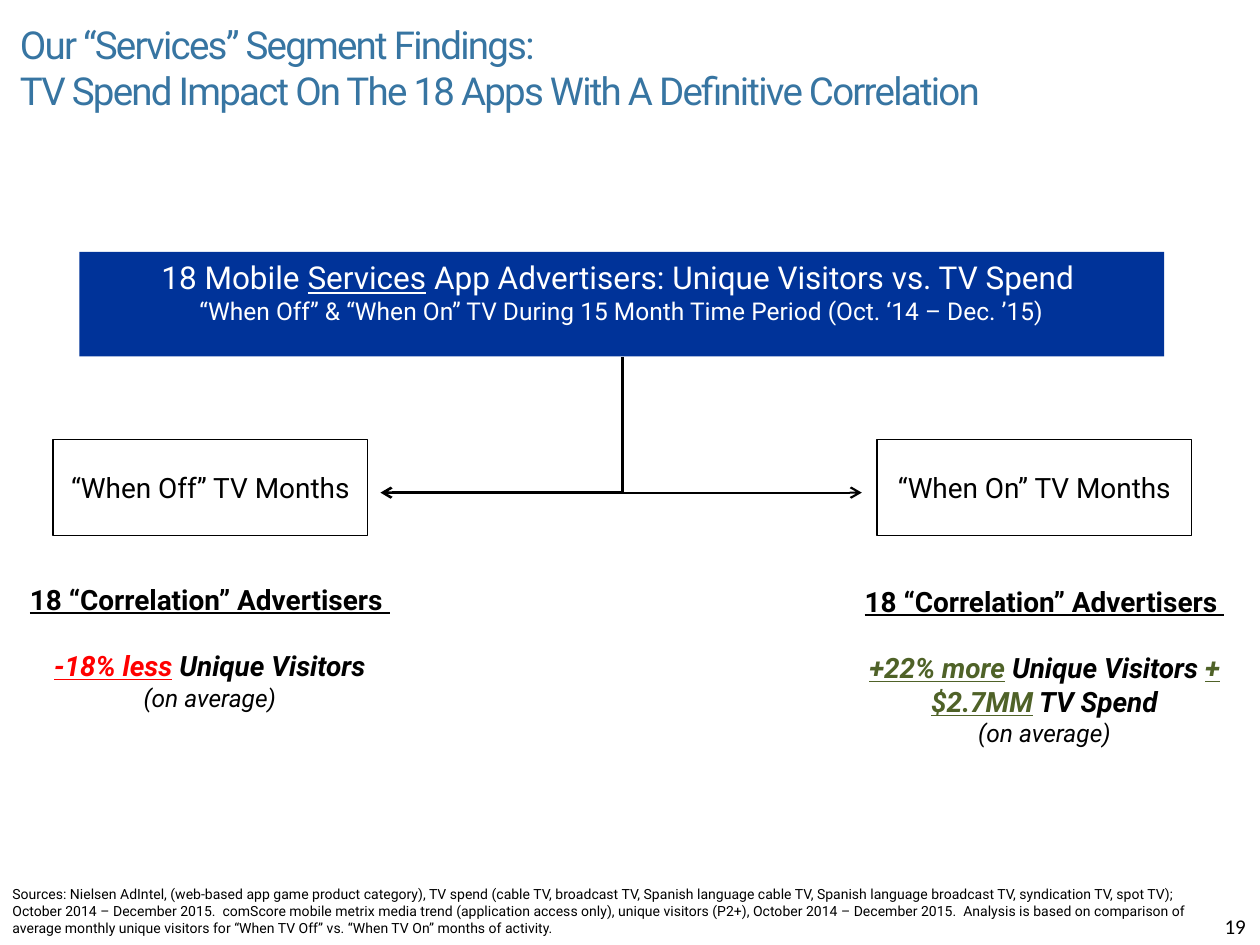
from lxml import etree
from pptx import Presentation
from pptx.dml.color import RGBColor
from pptx.enum.shapes import MSO_CONNECTOR, MSO_SHAPE
from pptx.enum.text import MSO_ANCHOR, PP_ALIGN
from pptx.oxml.ns import qn
from pptx.util import Inches, Pt

RECTANGLE = MSO_SHAPE.RECTANGLE
STRAIGHT, ELBOW = MSO_CONNECTOR.STRAIGHT, MSO_CONNECTOR.ELBOW
TOP, MIDDLE = MSO_ANCHOR.TOP, MSO_ANCHOR.MIDDLE
LEFT, CENTER = PP_ALIGN.LEFT, PP_ALIGN.CENTER
BLACK, WHITE, RED, GREEN = "000000", "FFFFFF", "FF0000", "4F6228"
TITLE_BLUE, BANNER_BLUE = "3775A2", "003399"


def color(value):
    return RGBColor.from_string(value)


def write(box, paragraphs, anchor=TOP, align=LEFT, gaps={}, **base):
    frame = box.text_frame
    frame.word_wrap = True
    frame.vertical_anchor = anchor
    for index, runs in enumerate(paragraphs):
        paragraph = frame.paragraphs[0] if index == 0 else frame.add_paragraph()
        paragraph.alignment = align
        if index in gaps:
            paragraph.space_before = Pt(gaps[index])
        for text, changes in runs:
            run = paragraph.add_run()
            run.text = text
            look = {"name": "Roboto", "color": BLACK, **base, **changes}
            run.font.color.rgb = color(look.pop("color"))
            spacing = look.pop("spacing", None)
            if spacing:
                run.font._element.set("spc", str(spacing))
            for attribute, value in look.items():
                setattr(run.font, attribute, value)


prs = Presentation()
prs.slide_width, prs.slide_height = Inches(10), Inches(7.5)
slide = prs.slides.add_slide(prs.slide_layouts[6])
shapes = slide.shapes

title = shapes.add_textbox(Inches(0.06), Inches(0.25), Inches(8.57), Inches(0.57))
write(title, [
    [("Our “Services” Segment Findings:", {})],
    [("TV Spend Impact On The 18 Apps With A Definitive Correlation", {})],
], anchor=MIDDLE, size=Pt(22), color=TITLE_BLUE, spacing=-100)

banner = shapes.add_shape(RECTANGLE, Inches(0.63), Inches(2), Inches(8.61), Inches(0.83))
banner.shadow.inherit = False
banner.fill.solid()
banner.fill.fore_color.rgb = color(BANNER_BLUE)
banner.line.fill.background()
write(banner, [
    [("18 Mobile ", {}), ("Services", {"underline": True}),
     (" App Advertisers: Unique Visitors vs. TV Spend ", {})],
    [("“When Off” & “When On” TV During 15 Month Time Period (Oct. ‘14 – Dec. ’15)",
      {"size": Pt(14)})],
], align=CENTER, size=Pt(18), color=WHITE)

for left, label in ((6.96, "“When On” TV Months"), (0.42, "“When Off” TV Months")):
    months = shapes.add_shape(RECTANGLE, Inches(left), Inches(3.49), Inches(2.5), Inches(0.76))
    months.shadow.inherit = False
    months.fill.solid()
    months.fill.fore_color.rgb = color(WHITE)
    months.line.color.rgb = color(BLACK)
    months.line.width = Pt(0.75)
    write(months, [[(label, {})]], anchor=MIDDLE, align=CENTER, size=Pt(16))

branch_on = shapes.add_connector(ELBOW, Inches(6.43), Inches(2.42), Inches(5.35), Inches(4.32))
branch_on._element.spPr.find(qn("a:xfrm")).set("rot", "16200000")
branch_on._element.spPr.find(qn("a:prstGeom")).set("prst", "bentConnector2")
branch_off = shapes.add_connector(STRAIGHT, Inches(4.94), Inches(3.91), Inches(3.02), Inches(3.91))
for branch, width in ((branch_on, 1.25), (branch_off, 1.5)):
    branch.line.color.rgb = color(BLACK)
    branch.line.width = Pt(width)
    etree.SubElement(branch.line._get_or_add_ln(), qn("a:tailEnd"), type="arrow")
    etree.SubElement(branch._element.spPr, qn("a:effectLst"))

strong = {"bold": True, "italic": True}
heading = [("18 “Correlation” Advertisers ", {"bold": True, "underline": True})]
average = [("(on average)", {"italic": True, "size": Pt(14)})]
less = {**strong, "underline": True, "color": RED}
more = {**less, "color": GREEN}
findings = (
    ((0.12, 4.49, 3.09, 1.29),
     [("-18% less", less), (" ", {}), ("Unique Visitors", strong)]),
    ((6.75, 4.7, 3.08, 1.17),
     [("+22% more", more), (" ", {}), ("Unique Visitors ", strong),
      ("+$2.7MM", more), (" TV Spend", strong)]),
)
for place, result in findings:
    finding = shapes.add_textbox(*map(Inches, place))
    write(finding, [heading, result, average], anchor=MIDDLE, align=CENTER,
          gaps={1: 19}, size=Pt(16))

sources = shapes.add_textbox(Inches(0), Inches(6.98), Inches(9.83), Inches(0.5))
write(sources, [[(
    "Sources: Nielsen AdIntel, (web-based app game product category), TV spend (cable TV, "
    "broadcast TV, Spanish language cable TV, Spanish language broadcast TV, syndication TV, "
    "spot TV); October 2014 – December 2015.  comScore mobile metrix media trend (application "
    "access only), unique visitors (P2+), October 2014 – December 2015.  Analysis is based on "
    "comparison of average monthly unique visitors for “When TV Off” vs. “When TV On” months "
    "of activity.", {})]], size=Pt(8))

page_number = shapes.add_textbox(Inches(9.62), Inches(7.2), Inches(0.38), Inches(0.3))
write(page_number, [[("19", {})]], name="Calibri", size=Pt(12))

prs.save("out.pptx")
